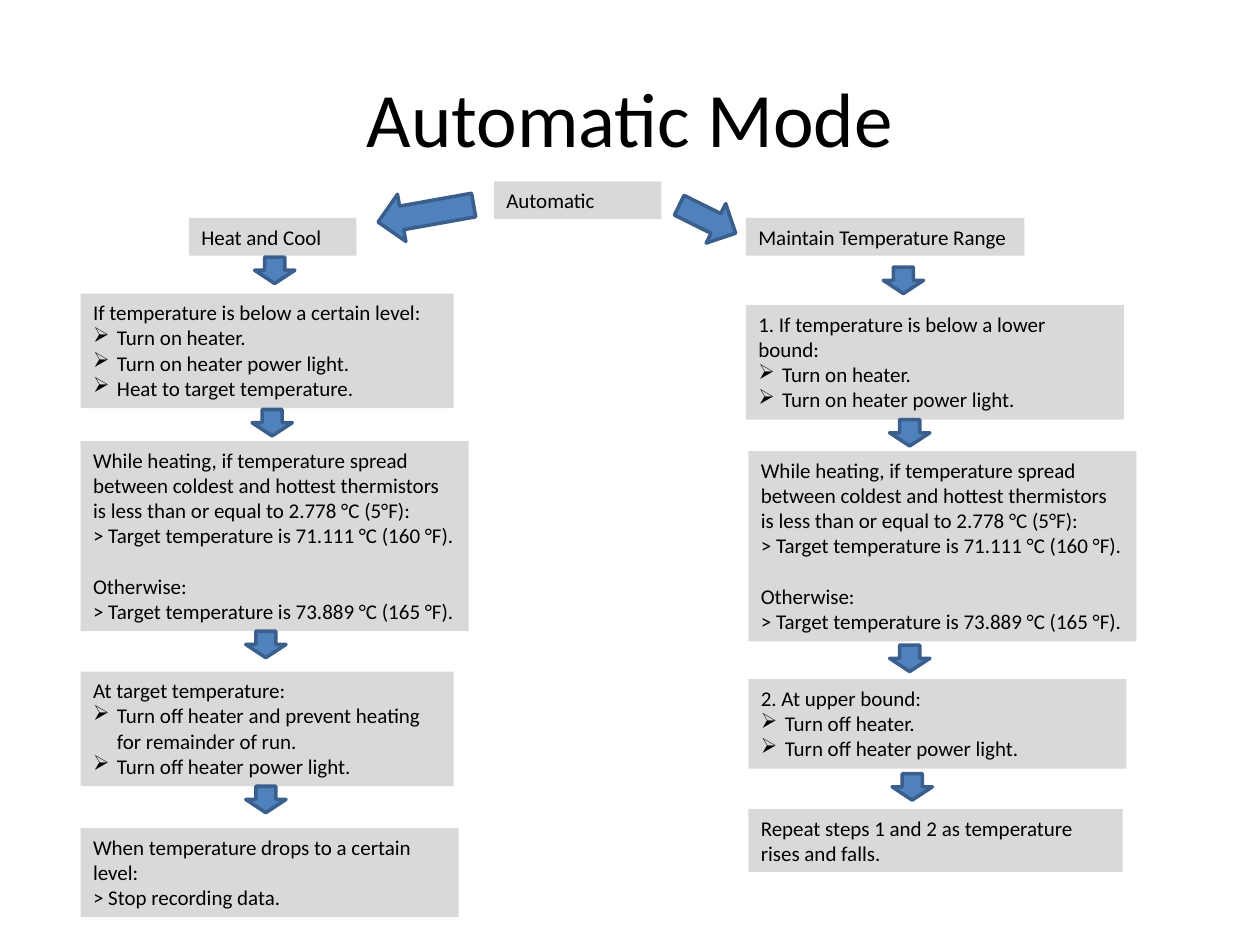
from pptx import Presentation
from pptx.dml.color import RGBColor
from pptx.enum.shapes import MSO_SHAPE
from pptx.enum.text import MSO_ANCHOR, MSO_AUTO_SIZE, PP_ALIGN
from pptx.oxml.ns import qn
from pptx.util import Inches, Pt
from lxml.etree import SubElement

COLORS = {"text": "000000", "box": "D9D9D9", "arrow": "4F81BD", "edge": "3A5F8C"}
FONT = "Calibri"
BULLET = "➢"


def color(name):
    return RGBColor.from_string(COLORS[name])


def style(para, size):
    para.font.name = FONT
    para.font.size = Pt(size)
    para.font.color.rgb = color("text")


deck = Presentation()
deck.slide_width, deck.slide_height = Inches(10), Inches(7.5)
slide = deck.slides.add_slide(deck.slide_layouts[5])

title = slide.shapes.title
title.left, title.top = Inches(0.5), Inches(0.3)
title.width, title.height = Inches(9), Inches(1.25)
title.text_frame.text = "Automatic Mode"
title.text_frame.vertical_anchor = MSO_ANCHOR.MIDDLE
head = title.text_frame.paragraphs[0]
head.alignment = PP_ALIGN.CENTER
style(head, 44)

heating = [
    "While heating, if temperature spread between coldest and hottest thermistors "
    "is less than or equal to 2.778 °C (5°F):",
    "> Target temperature is 71.111 °C (160 °F).",
    "Otherwise:",
    "> Target temperature is 73.889 °C (165 °F).",
]

boxes = [
    (3.92, 1.44, 1.33, 0.3, ["Automatic"]),
    (1.5, 1.73, 1.33, 0.3, ["Heat and Cool"]),
    (5.92, 1.73, 2.21, 0.3, ["Maintain Temperature Range"]),
    (0.64, 2.33, 2.96, 0.91, ["If temperature is below a certain level:",
                              "➢Turn on heater.",
                              "➢Turn on heater power light.",
                              "➢Heat to target temperature."]),
    (0.64, 3.5, 3.08, 1.51, heating),
    (0.64, 5.33, 2.96, 0.91, ["At target temperature:",
                              "➢Turn off heater and prevent heating for remainder of run.",
                              "➢Turn off heater power light."]),
    (0.64, 6.57, 3, 0.71, ["When temperature drops to a certain level:",
                           "> Stop recording data."]),
    (5.92, 2.42, 3, 0.91, ["1. If temperature is below a lower bound:",
                           "➢Turn on heater.",
                           "➢Turn on heater power light."]),
    (5.94, 3.58, 3.08, 1.51, heating),
    (5.94, 5.39, 3, 0.71, ["2. At upper bound:",
                           "➢Turn off heater.",
                           "➢Turn off heater power light."]),
    (5.94, 6.42, 2.97, 0.5, ["Repeat steps 1 and 2 as temperature rises and falls."]),
]

for left, top, width, height, lines in boxes:
    box = slide.shapes.add_textbox(Inches(left), Inches(top), Inches(width), Inches(height))
    box.fill.solid()
    box.fill.fore_color.rgb = color("box")
    frame = box.text_frame
    frame.word_wrap = True
    frame.auto_size = MSO_AUTO_SIZE.SHAPE_TO_FIT_TEXT
    for i, line in enumerate(lines):
        para = frame.add_paragraph() if i else frame.paragraphs[0]
        para.text = line.removeprefix(BULLET)
        if line.startswith(BULLET):
            props = para._p.get_or_add_pPr()
            props.set("marL", str(Inches(0.19)))
            props.set("indent", str(Inches(-0.19)))
            SubElement(props, qn("a:buChar")).set("char", BULLET)
        if line == "Otherwise:":
            para.space_before = Pt(14.65)
        style(para, 12)

arrows = [(3.19, 1.31, 0.38, 0.77, 79.9), (5.44, 1.49, 0.35, 0.5, 296.4)]
steps = [(2.02, 2.04), (2, 3.25), (1.95, 5.01), (1.95, 6.24),
         (7.01, 2.12), (7.06, 3.33), (7.06, 5.12), (7.08, 6.14)]
arrows += [(left, top, 0.32, 0.21, 0) for left, top in steps]

for left, top, width, height, turn in arrows:
    arrow = slide.shapes.add_shape(MSO_SHAPE.DOWN_ARROW, Inches(left), Inches(top),
                                   Inches(width), Inches(height))
    arrow.rotation = turn
    arrow.shadow.inherit = False
    arrow.fill.solid()
    arrow.fill.fore_color.rgb = color("arrow")
    arrow.line.color.rgb = color("edge")
    arrow.line.width = Pt(2)

deck.save("out.pptx")
